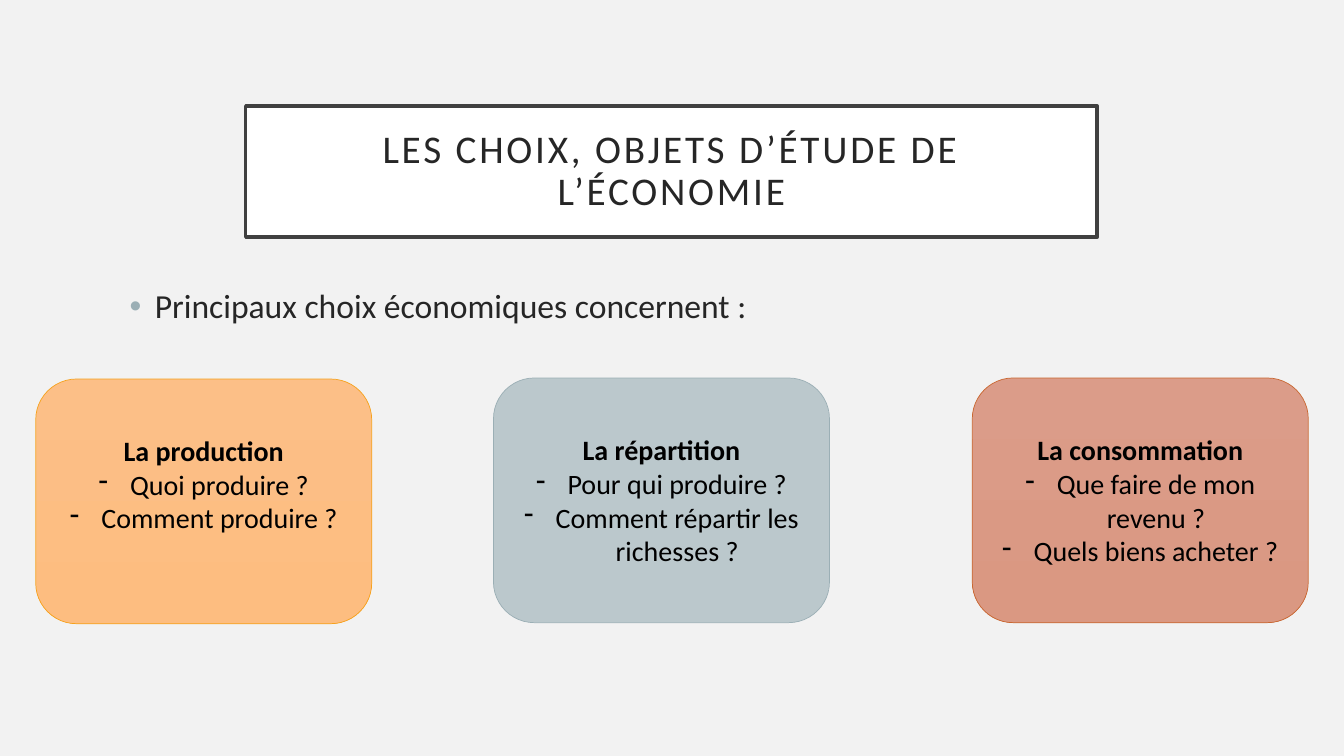
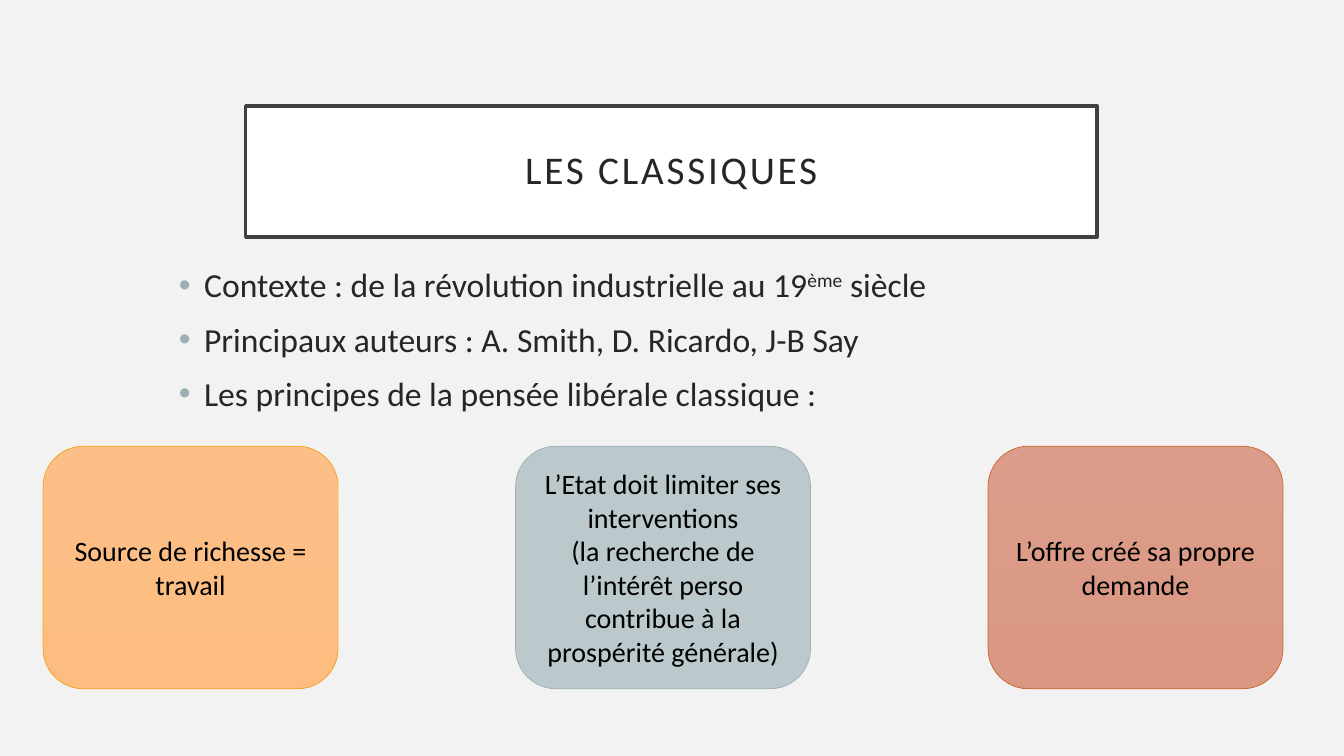
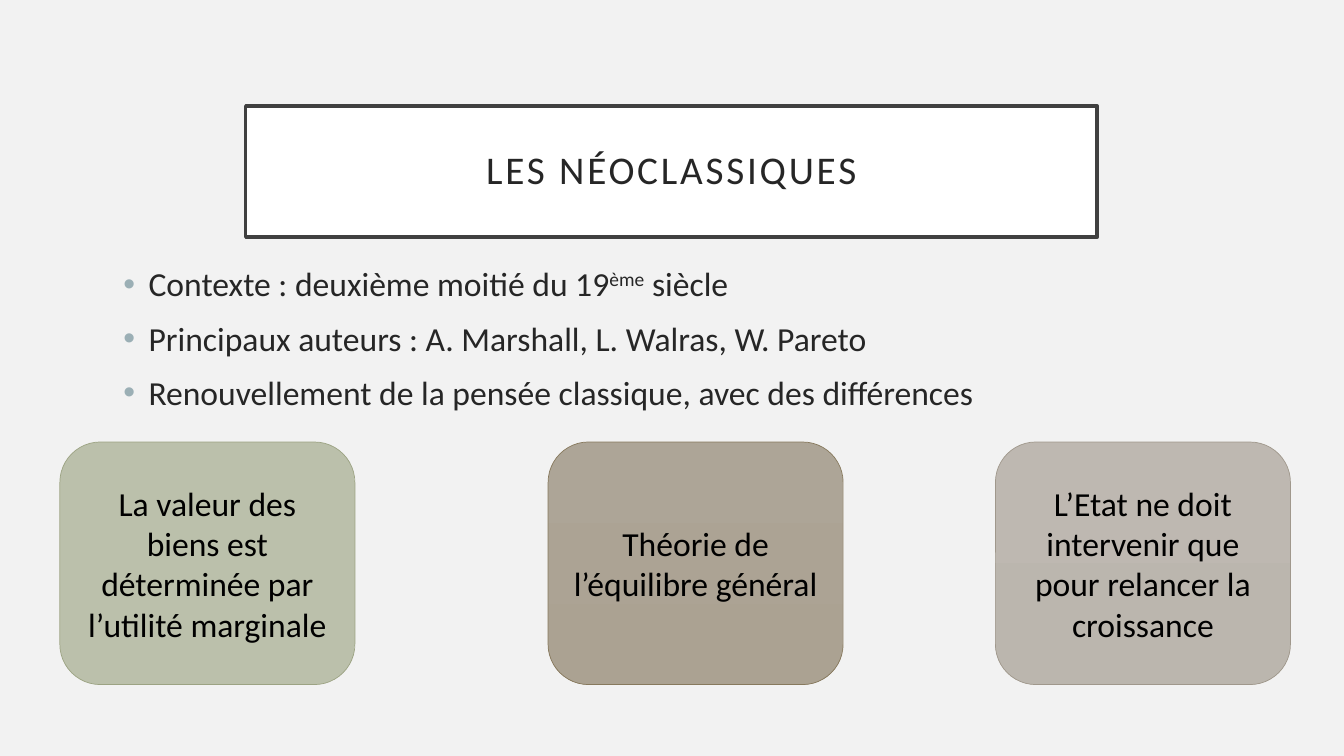
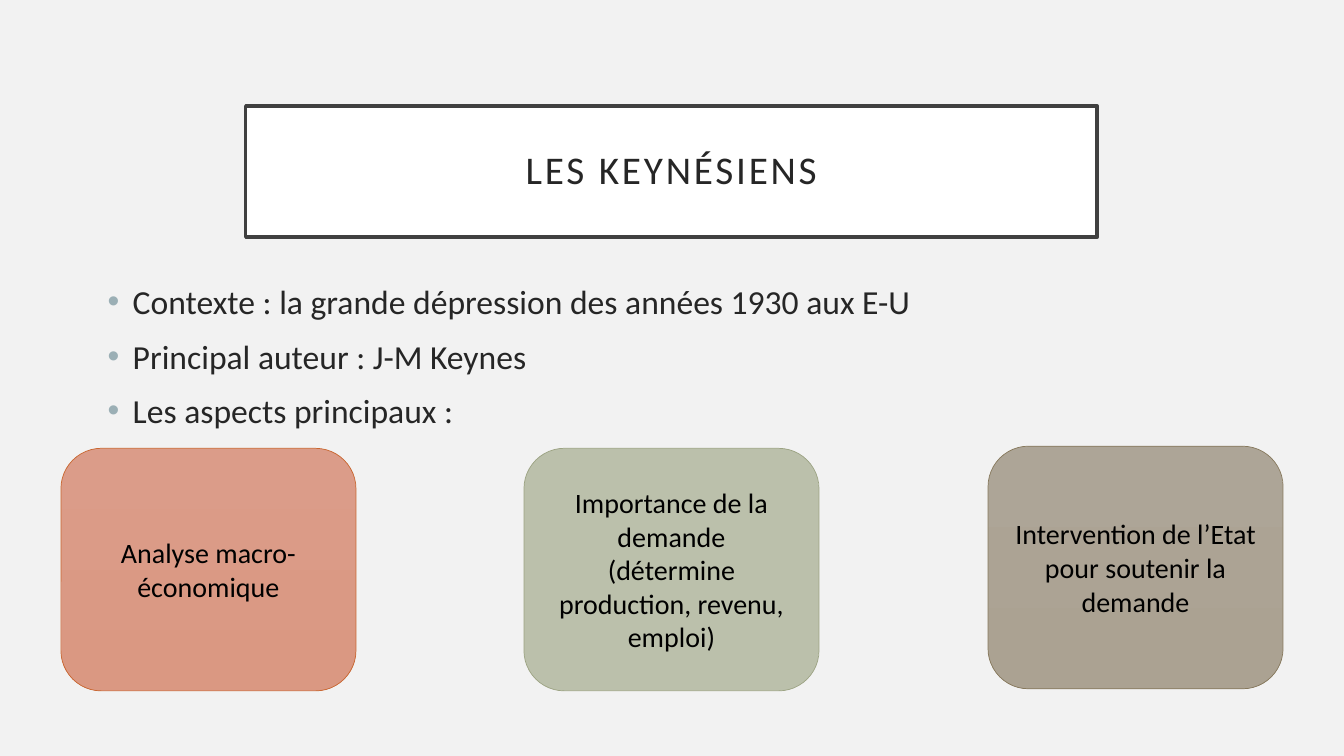
from dataclasses import dataclass
from typing import Optional

from lxml import etree
from pptx import Presentation
from pptx.dml.color import RGBColor
from pptx.enum.shapes import MSO_SHAPE
from pptx.enum.text import MSO_ANCHOR, PP_ALIGN
from pptx.oxml.ns import qn
from pptx.util import Pt

RECTANGLE = MSO_SHAPE.RECTANGLE
ROUNDED = MSO_SHAPE.ROUNDED_RECTANGLE
MIDDLE = MSO_ANCHOR.MIDDLE
LEFT, CENTER = PP_ALIGN.LEFT, PP_ALIGN.CENTER

EMU_PER_PX = 9525
SLIDE_WIDTH, SLIDE_HEIGHT = 1280, 720


@dataclass(frozen=True)
class Tone:
    top: str
    bottom: str
    line: str


@dataclass(frozen=True)
class Theme:
    font: str = "Calibri"
    background: str = "F2F2F2"
    title_fill: str = "FFFFFF"
    title_line: str = "404040"
    text: str = "262626"
    card_text: str = "000000"
    bullet: str = "9BAFB5"
    title_size: int = 28
    body_size: int = 24
    card_size: int = 20
    orange: Tone = Tone("FCBF87", "FDBD80", "F6A21D")
    blue: Tone = Tone("BBC8CC", "B8C6CB", "9BAFB5")
    red: Tone = Tone("DB9C89", "DA9882", "C96731")
    green: Tone = Tone("BBC0AB", "B9BEA8", "9CA383")
    brown: Tone = Tone("ADA597", "ABA292", "87795D")
    grey: Tone = Tone("BEB8B1", "BBB6AE", "A0988C")


THEME = Theme()


@dataclass(frozen=True)
class Area:
    left: int
    top: int
    width: int
    height: int

    def emu(self) -> list[int]:
        return [px(n) for n in (self.left, self.top, self.width, self.height)]


@dataclass(frozen=True)
class Bullet:
    character: str
    indent: int
    color: Optional[str] = None
    font: Optional[str] = None


@dataclass(frozen=True)
class Run:
    text: str
    bold: bool = False
    superscript: bool = False


@dataclass(frozen=True)
class Line:
    runs: tuple[Run, ...]
    bullet: Optional[Bullet] = None


@dataclass(frozen=True)
class Card:
    area: Area
    tone: Tone
    lines: tuple[Line, ...]
    size: int = THEME.card_size
    bottom_inset: int = 5


@dataclass(frozen=True)
class Topic:
    title: str
    body_area: Area
    body: tuple[Line, ...]
    cards: tuple[Card, ...]


DOT = Bullet("•", 24, THEME.bullet, "Arial")
DASH = Bullet("-", 30)
TITLE_AREA = Area(234, 101, 811, 125)
TITLE_INSET = 19
BODY_WIDTH, BODY_HEIGHT = 811, 325
CARD_WIDTH, CARD_HEIGHT = 281, 231


def px(length: int) -> int:
    return length * EMU_PER_PX


def rgb(value: str) -> RGBColor:
    return RGBColor.from_string(value)


def line(*texts: str, bullet: Optional[Bullet] = None) -> Line:
    """Make a line whose second text, if any, is raised."""
    return Line(tuple(Run(text, superscript=index == 1) for index, text in enumerate(texts)), bullet)


def heading_lines(heading: str, *questions: str) -> tuple[Line, ...]:
    return (Line((Run(heading, bold=True),)), *(line(text, bullet=DASH) for text in questions))


def body_area(left: int, top: int, width: int = BODY_WIDTH) -> Area:
    return Area(left, top, width, BODY_HEIGHT)


def card(left: int, top: int, tone: Tone, *texts: str, size: int = THEME.card_size) -> Card:
    return Card(Area(left, top, CARD_WIDTH, CARD_HEIGHT), tone, tuple(map(line, texts)), size)


def add_bullet(paragraph, bullet: Bullet) -> None:
    properties = paragraph._p.get_or_add_pPr()
    properties.set("marL", str(px(bullet.indent)))
    properties.set("indent", str(-px(bullet.indent)))
    if bullet.color:
        color = etree.SubElement(properties, qn("a:buClr"))
        etree.SubElement(color, qn("a:srgbClr"), val=bullet.color)
    if bullet.font:
        etree.SubElement(properties, qn("a:buFont"), typeface=bullet.font)
    etree.SubElement(properties, qn("a:buChar"), char=bullet.character)


def write_text(shape, lines: tuple[Line, ...], *, size: int, color: str, align=CENTER,
               anchor=None, line_spacing: Optional[float] = None,
               space_before: int = 0, letter_spacing: int = 0) -> None:
    frame = shape.text_frame
    frame.word_wrap = True
    if anchor is not None:
        frame.vertical_anchor = anchor
    for index, item in enumerate(lines):
        paragraph = frame.add_paragraph() if index else frame.paragraphs[0]
        paragraph.alignment = align
        paragraph.line_spacing = line_spacing
        paragraph.space_before = Pt(space_before)
        if item.bullet:
            add_bullet(paragraph, item.bullet)
        for part in item.runs:
            run = paragraph.add_run()
            run.text = part.text
            run.font.name = THEME.font
            run.font.size = Pt(size)
            run.font.bold = part.bold
            run.font.color.rgb = rgb(color)
            properties = run._r.get_or_add_rPr()
            if letter_spacing:
                properties.set("spc", str(letter_spacing * 100))
            if part.superscript:
                properties.set("baseline", "30000")


def add_panel(slide, kind, area: Area, line_color: str, line_width: float):
    shape = slide.shapes.add_shape(kind, *area.emu())
    shape.shadow.inherit = False
    shape.line.color.rgb = rgb(line_color)
    shape.line.width = Pt(line_width)
    return shape


def add_title(slide, title: str) -> None:
    shape = add_panel(slide, RECTANGLE, TITLE_AREA, THEME.title_line, 2.5)
    shape.fill.solid()
    shape.fill.fore_color.rgb = rgb(THEME.title_fill)
    frame = shape.text_frame
    frame.margin_left = frame.margin_right = px(TITLE_INSET)
    frame.margin_top = frame.margin_bottom = px(TITLE_INSET)
    write_text(shape, (line(title),), size=THEME.title_size, color=THEME.text,
               anchor=MIDDLE, line_spacing=0.9, letter_spacing=2)


def add_card(slide, item: Card) -> None:
    shape = add_panel(slide, ROUNDED, item.area, item.tone.line, 0.5)
    shape.fill.gradient()
    shape.fill.gradient_angle = 270
    for stop, color in zip(shape.fill.gradient_stops, (item.tone.top, item.tone.bottom)):
        stop.color.rgb = rgb(color)
    shape.text_frame.margin_bottom = px(item.bottom_inset)
    write_text(shape, item.lines, size=item.size, color=THEME.card_text, anchor=MIDDLE)


def add_topic(presentation, topic: Topic) -> None:
    slide = presentation.slides.add_slide(presentation.slide_layouts[6])
    add_title(slide, topic.title)
    body = slide.shapes.add_textbox(*topic.body_area.emu())
    write_text(body, topic.body, size=THEME.body_size, color=THEME.text,
               align=LEFT, space_before=10)
    for item in topic.cards:
        add_card(slide, item)


TOPICS = (
    Topic(
        "LES CHOIX, OBJETS D’ÉTUDE DE L’ÉCONOMIE",
        body_area(114, 267),
        (line("Principaux choix économiques concernent :", bullet=DOT),),
        (
            Card(Area(34, 361, 320, 233), THEME.orange,
                 heading_lines("La production", "Quoi produire ?", "Comment produire ?"),
                 bottom_inset=38),
            Card(Area(470, 360, 320, 233), THEME.blue,
                 heading_lines("La répartition", "Pour qui produire ?",
                               "Comment répartir les richesses ?")),
            Card(Area(926, 360, 320, 233), THEME.red,
                 heading_lines("La consommation", "Que faire de mon revenu ?",
                               "Quels biens acheter ?")),
        ),
    ),
    Topic(
        "LES CLASSIQUES",
        body_area(161, 247),
        (
            line("Contexte : de la révolution industrielle au 19", "ème", " siècle", bullet=DOT),
            line("Principaux auteurs : A. Smith, D. Ricardo, J-B Say", bullet=DOT),
            line("Les principes de la pensée libérale classique :", bullet=DOT),
        ),
        (
            card(41, 425, THEME.orange, "Source de richesse = travail"),
            card(491, 425, THEME.blue, "L’Etat doit limiter ses interventions",
                 "(la recherche de l’intérêt perso contribue à la prospérité générale)"),
            card(941, 425, THEME.red, "L’offre créé sa propre demande"),
        ),
    ),
    Topic(
        "LES NÉOCLASSIQUES",
        body_area(108, 246, 887),
        (
            line("Contexte : deuxième moitié du 19", "ème", " siècle", bullet=DOT),
            line("Principaux auteurs : A. Marshall, L. Walras, W. Pareto", bullet=DOT),
            line("Renouvellement de la pensée classique, avec des différences", bullet=DOT),
        ),
        (
            card(57, 421, THEME.green,
                 "La valeur des biens est déterminée par l’utilité marginale", size=24),
            card(522, 421, THEME.brown, "Théorie de l’équilibre général", size=24),
            card(948, 421, THEME.grey,
                 "L’Etat ne doit intervenir que pour relancer la croissance", size=24),
        ),
    ),
    Topic(
        "LES KEYNÉSIENS",
        body_area(93, 263),
        (
            line("Contexte : la grande dépression des années 1930 aux E-U", bullet=DOT),
            line("Principal auteur : J-M Keynes", bullet=DOT),
            line("Les aspects principaux :", bullet=DOT),
        ),
        (
            card(58, 427, THEME.red, "Analyse macro-économique"),
            card(499, 427, THEME.green, "Importance de la demande",
                 "(détermine production, revenu, emploi)"),
            card(941, 425, THEME.brown, "Intervention de l’Etat pour soutenir la demande"),
        ),
    ),
)


def main() -> None:
    presentation = Presentation()
    presentation.slide_width = px(SLIDE_WIDTH)
    presentation.slide_height = px(SLIDE_HEIGHT)
    background = presentation.slide_master.background.fill
    background.solid()
    background.fore_color.rgb = rgb(THEME.background)
    for topic in TOPICS:
        add_topic(presentation, topic)
    presentation.save("out.pptx")


if __name__ == "__main__":
    main()
